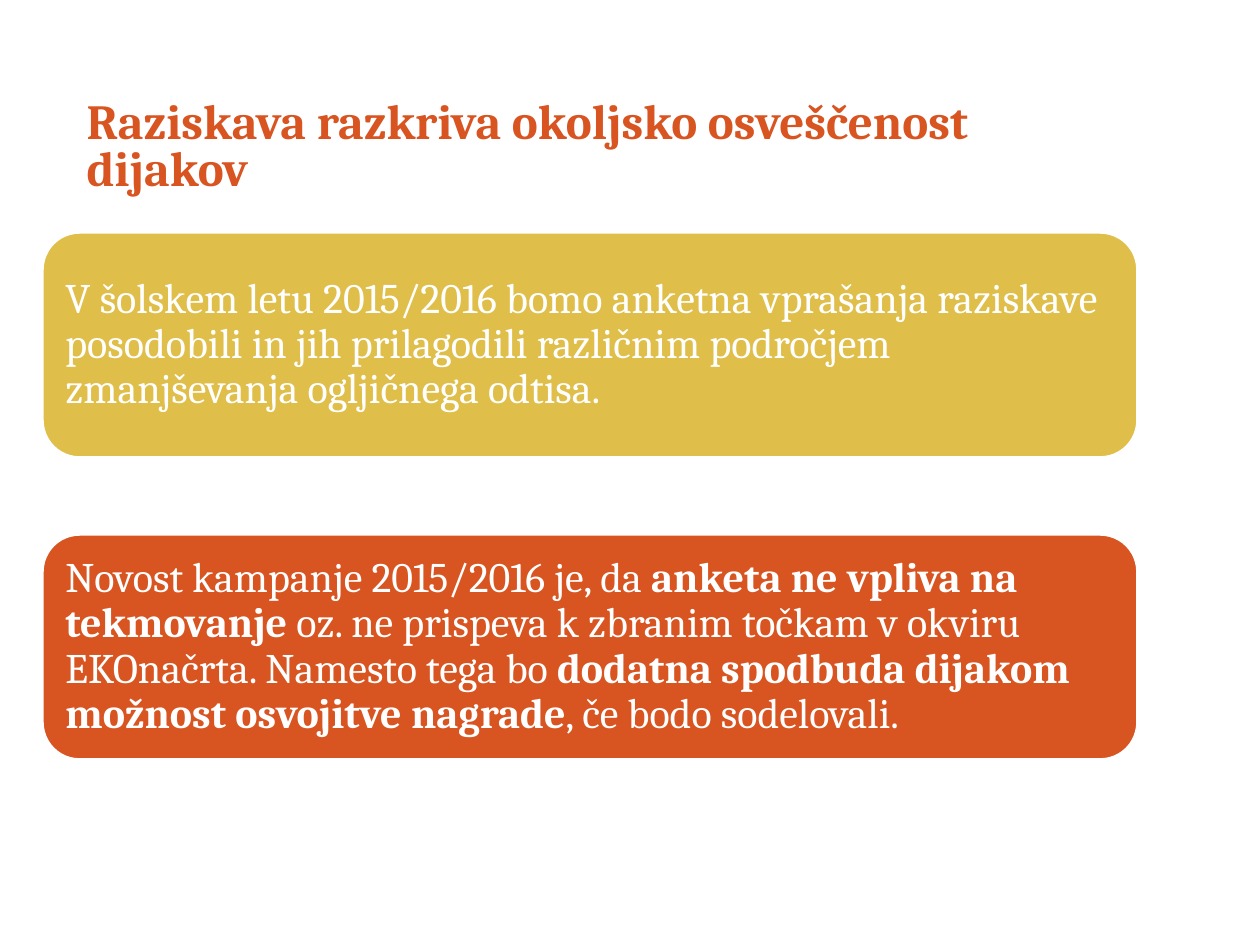
from pptx import Presentation
from pptx import util as u
from pptx.dml import color
from pptx.enum import shapes, text

TITLE = "Raziskava razkriva okoljsko osveščenost dijakov"
ORANGE, GOLD, WHITE = "D85421", "E0BE4A", "FFFFFF"
CARDS = [
    (GOLD, [("V šolskem letu 2015/2016 bomo anketna vprašanja raziskave "
             "posodobili in jih prilagodili različnim področjem "
             "zmanjševanja ogljičnega odtisa.", False)]),
    (ORANGE, [("Novost kampanje 2015/2016 je, da ", False),
              ("anketa ne vpliva na tekmovanje ", True),
              ("oz. ne prispeva k zbranim točkam v okviru EKOnačrta. "
               "Namesto tega bo ", False),
              ("dodatna spodbuda dijakom možnost osvojitve nagrade", True),
              (", če bodo sodelovali.", False)]),
]


def px(length):
    """Turn pixels, 126 to the inch, into EMU."""
    return u.Inches(length / 126)


def rgb(value):
    """Turn a hex string into a colour."""
    return color.RGBColor.from_string(value)


def write(box, spans, size, ink, spacing):
    """Write one left-aligned, vertically centred paragraph of spans."""
    frame = box.text_frame
    frame.word_wrap = True
    frame.auto_size = text.MSO_AUTO_SIZE.NONE
    frame.vertical_anchor = text.MSO_ANCHOR.MIDDLE
    para = frame.paragraphs[0]
    para.alignment = text.PP_ALIGN.LEFT
    para.line_spacing = spacing
    for words, bold in spans:
        span = para.add_run()
        span.text = words
        span.font.name = "Cambria"
        span.font.size = u.Pt(size)
        span.font.bold = bold
        span.font.color.rgb = rgb(ink)


def add_title(page, left, top, width, height):
    """Place and fill the title placeholder."""
    box = page.shapes.title
    box.left, box.top, box.width, box.height = map(px, (left, top, width, height))
    write(box, [(TITLE, True)], 28, ORANGE, 0.8)


def add_card(page, left, top, width, height, fill, spans):
    """Add a rounded card holding its text."""
    box = page.shapes.add_shape(shapes.MSO_SHAPE.ROUNDED_RECTANGLE,
                                *map(px, (left, top, width, height)))
    box.shadow.inherit = False
    box.fill.solid()
    box.fill.fore_color.rgb = rgb(fill)
    box.line.color.rgb = rgb(WHITE)
    box.line.width = u.Pt(2)
    write(box, spans, 24, WHITE, 0.9)


def add_cards(page, left, top, width, height, gap):
    """Stack the cards downwards at an equal gap."""
    for row, (fill, spans) in enumerate(CARDS):
        add_card(page, left, top + row * (height + gap), width, height, fill, spans)


def main():
    """Build and save the deck."""
    deck = Presentation()
    deck.slide_width, deck.slide_height = px(1260), px(945)
    page = deck.slides.add_slide(deck.slide_layouts[5])
    add_title(page, 74, 76, 931, 145)
    add_cards(page, 42, 232, 1096, 226, 76)
    deck.save("out.pptx")


if __name__ == "__main__":
    main()
